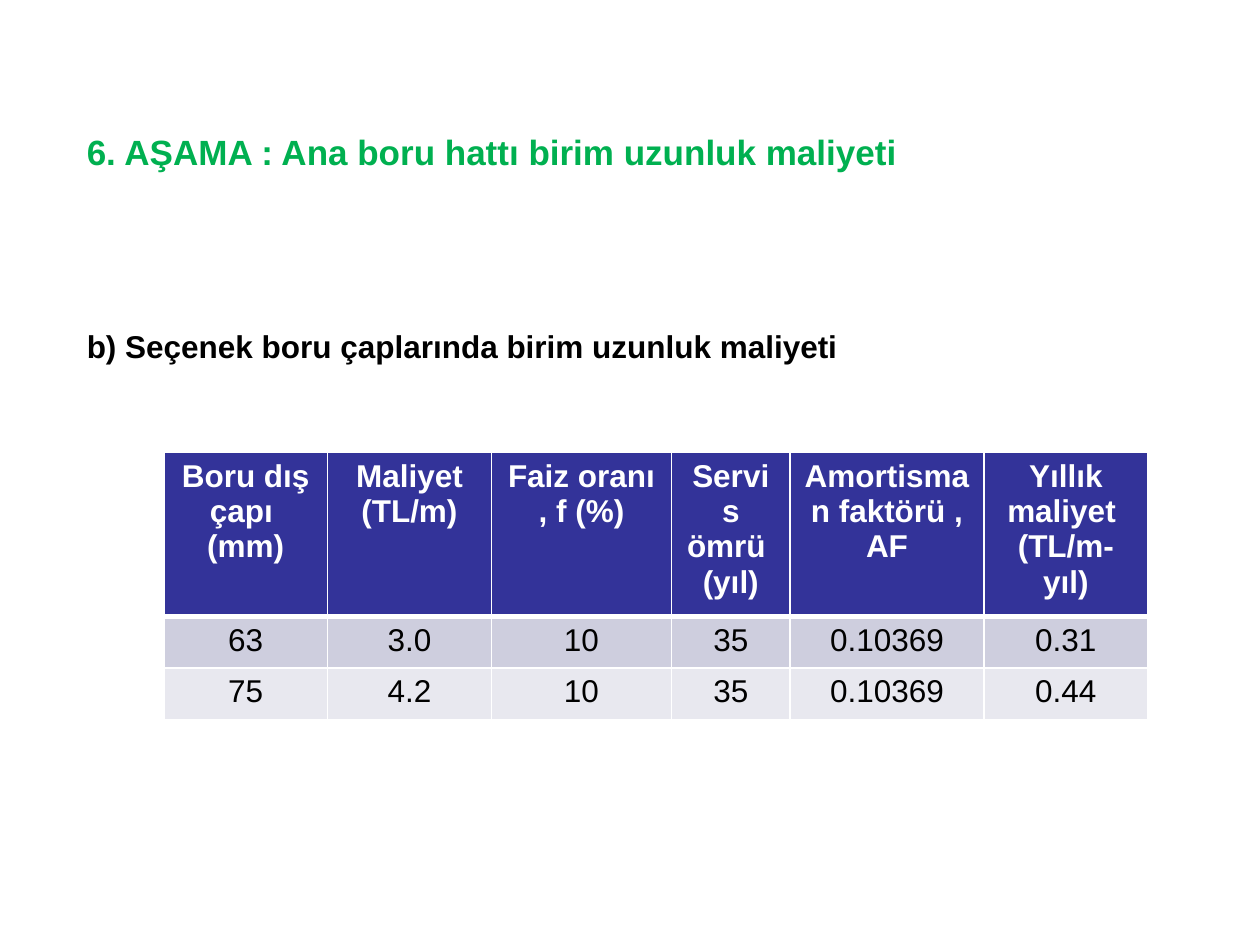
import pptx
import pptx.util
import pptx.dml.color
import pptx.enum.text
import pptx.oxml
import pptx.oxml.ns

Inches, Pt = pptx.util.Inches, pptx.util.Pt

# Content
LINES = [
    ("6. AŞAMA : Ana boru hattı birim uzunluk maliyeti", 20, "00B050", 0),
    ("b) Seçenek boru çaplarında birim uzunluk maliyeti", 18, "000000", 88),
]
ROWS = [
    ["Boru dış çapı \n(mm)", "Maliyet (TL/m)", "Faiz oranı , f (%)",
     "Servis ömrü \n(yıl)", "Amortisman faktörü , AF",
     "Yıllık maliyet \n(TL/m-yıl)"],
    ["63", "3.0", "10", "35", "0.10369", "0.31"],
    ["75", "4.2", "10", "35", "0.10369", "0.44"],
]
COLS = [1.3, 1.3, 1.43, 0.94, 1.54, 1.3]
HIGH = [1.29, 0.41, 0.41]
FILLS = ["333399", "CECEDE", "E8E8EF"]


def color(code):
    return pptx.dml.color.RGBColor.from_string(code)


def style(font, code, **form):
    font.color.rgb = color(code)
    for key, value in {"name": "Arial", "size": Pt(18), **form}.items():
        setattr(font, key, value)


def border(cell, side, width):
    space = pptx.oxml.ns.nsdecls("a")
    line = pptx.oxml.parse_xml(
        f'<a:{side} {space} w="{Pt(width)}"><a:solidFill>'
        f'<a:srgbClr val="FFFFFF"/></a:solidFill></a:{side}>')
    # Borders come before the fill in cell properties
    props = cell._tc.get_or_add_tcPr()
    props.insert(len(props), line)


deck = pptx.Presentation()
deck.slide_width, deck.slide_height = Inches(10), Inches(7.5)
slide = deck.slides.add_slide(deck.slide_layouts[6])

# Headings
box = slide.shapes.add_textbox(Inches(0.59), Inches(0.99),
                               Inches(7.72), Inches(1.95))
frame = box.text_frame
frame.word_wrap = True
frame.text = "\n".join(line[0] for line in LINES)
for para, (_, size, code, gap) in zip(frame.paragraphs, LINES):
    para.space_before = Pt(gap)
    style(para.runs[0].font, code, size=Pt(size), bold=True)

# Cost table
table = slide.shapes.add_table(
    len(ROWS), len(COLS), Inches(1.3), Inches(3.59),
    Inches(sum(COLS)), Inches(sum(HIGH))).table
for col, width in zip(table.columns, COLS):
    col.width = Inches(width)
for r, texts in enumerate(ROWS):
    table.rows[r].height = Inches(HIGH[r])
    head = r == 0
    for c, text in enumerate(texts):
        cell = table.cell(r, c)
        for side in ("lnL", "lnR", "lnT", "lnB"):
            thick = (head and side == "lnB") or (r == 1 and side == "lnT")
            border(cell, side, 3 if thick else 1)
        cell.fill.solid()
        cell.fill.fore_color.rgb = color(FILLS[r])
        cell.text = text
        for para in cell.text_frame.paragraphs:
            para.alignment = pptx.enum.text.PP_ALIGN.CENTER
            style(para.runs[0].font, "FFFFFF" if head else "000000", bold=head)

deck.save("out.pptx")
